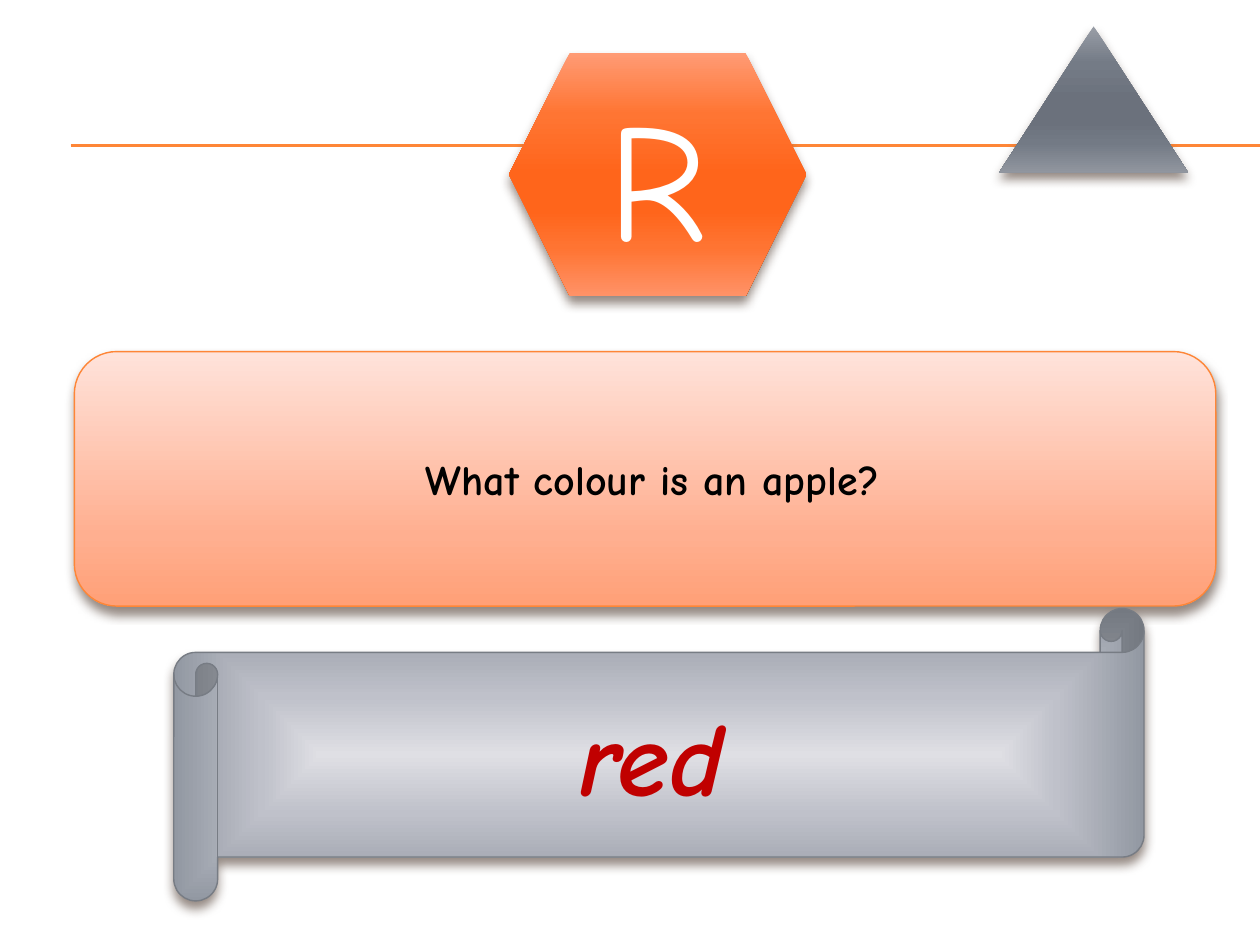
from lxml import etree
from pptx import Presentation
from pptx import util as u
from pptx.dml.color import RGBColor
from pptx.enum import shapes, text
from pptx.oxml import parse_xml
from pptx.oxml.ns import nsdecls, qn

FONT = "Comic Neue"
ORANGE = "FE8637"
SHADOW = "4E3B30"
KIND = shapes.MSO_SHAPE

RULE_HEIGHTS = [1.15, 1.16]
RULE_LEFT, RULE_RIGHT = 0.56, 10

SHAPES = [
    {"kind": KIND.ISOSCELES_TRIANGLE, "at": (7.93, 0.21, 1.5, 1.16),
     "stops": [(0, "989DA6"), (25, "747B86"), (50, "6B717C"),
               (65, "6B717C"), (80, "737A85"), (100, "91969F")]},
    {"kind": KIND.HEXAGON, "at": (4.04, 0.42, 2.36, 1.93),
     "stops": [(0, "FF9B75"), (25, "FF7533"), (50, "FF651B"),
               (65, "FF651B"), (80, "FF7432"), (100, "FF9267")],
     "text": "R", "size": 96, "color": "FFFFFF"},
    {"kind": KIND.ROUNDED_RECTANGLE, "at": (0.59, 2.79, 9.06, 2.02),
     "stops": [(0, "FFE3DB"), (72, "FFAF90"), (100, "FFA077")], "line": ORANGE,
     "text": " What colour is an apple?", "size": 24, "color": "000000", "bold": True},
    {"kind": KIND.HORIZONTAL_SCROLL, "at": (1.38, 4.83, 7.7, 2.32), "adjust": 0.15,
     "stops": [(0, "DFDFE4"), (40, "BFC1CA"), (100, "9298A2")],
     "from_center": True, "line": "777C84",
     "text": "red ", "size": 60, "color": "C00000", "bold": True, "italic": True,
     "space_before": 12},
]


def rgb(color):
    return RGBColor.from_string(color)


def set_gradient(shape, stops, from_center):
    """Fill from top to bottom, or outwards from the centre."""
    stop_xml = "".join(
        f'<a:gs pos="{position * 1000}"><a:srgbClr val="{color}"/></a:gs>'
        for position, color in stops)
    if from_center:
        direction = ('<a:path path="rect"><a:fillToRect l="50000" t="50000" '
                     'r="50000" b="50000"/></a:path>')
    else:
        direction = '<a:lin ang="5400000" scaled="0"/>'
    shape.fill.background()
    properties = shape.element.spPr
    properties.replace(properties.find(qn("a:noFill")), parse_xml(
        f'<a:gradFill {nsdecls("a")} rotWithShape="1">'
        f'<a:gsLst>{stop_xml}</a:gsLst>{direction}</a:gradFill>'))


def set_shadow(shape):
    shape.shadow.inherit = False
    shape.element.spPr.find(qn("a:effectLst")).append(parse_xml(
        f'<a:outerShdw {nsdecls("a")} blurRad="{u.Pt(6)}" dist="{u.Pt(4)}" '
        f'dir="5400000" rotWithShape="0"><a:srgbClr val="{SHADOW}">'
        '<a:alpha val="60000"/></a:srgbClr></a:outerShdw>'))


def add_text(shape, item):
    frame = shape.text_frame
    frame.word_wrap = True
    frame.vertical_anchor = text.MSO_ANCHOR.MIDDLE
    paragraph = frame.paragraphs[0]
    paragraph.alignment = text.PP_ALIGN.CENTER
    paragraph.space_before = u.Pt(item.get("space_before", 0))
    run = paragraph.add_run()
    run.text = item["text"]
    font = run.font
    font.name = FONT
    font.size = u.Pt(item["size"])
    font.bold = item.get("bold", False)
    font.italic = item.get("italic", False)
    font.color.rgb = rgb(item["color"])


def add_rule(slide, top):
    rule = slide.shapes.add_connector(
        shapes.MSO_CONNECTOR.STRAIGHT, u.Inches(RULE_LEFT), u.Inches(top),
        u.Inches(RULE_RIGHT), u.Inches(top))
    rule.line.color.rgb = rgb(ORANGE)
    rule.line.width = u.Pt(0.75)
    etree.SubElement(rule.element.spPr, qn("a:effectLst"))


def add_shape(slide, item):
    shape = slide.shapes.add_shape(item["kind"], *map(u.Inches, item["at"]))
    if "adjust" in item:
        shape.adjustments[0] = item["adjust"]
    set_gradient(shape, item["stops"], item.get("from_center", False))
    if "line" in item:
        shape.line.color.rgb = rgb(item["line"])
        shape.line.width = u.Pt(0.79)
    else:
        shape.line.fill.background()
    set_shadow(shape)
    if "text" in item:
        add_text(shape, item)


def main():
    presentation = Presentation()
    presentation.slide_width = u.Inches(10)
    presentation.slide_height = u.Inches(7.5)
    slide = presentation.slides.add_slide(presentation.slide_layouts[6])
    for top in RULE_HEIGHTS:
        add_rule(slide, top)
    for item in SHAPES:
        add_shape(slide, item)
    presentation.save("out.pptx")


if __name__ == "__main__":
    main()
